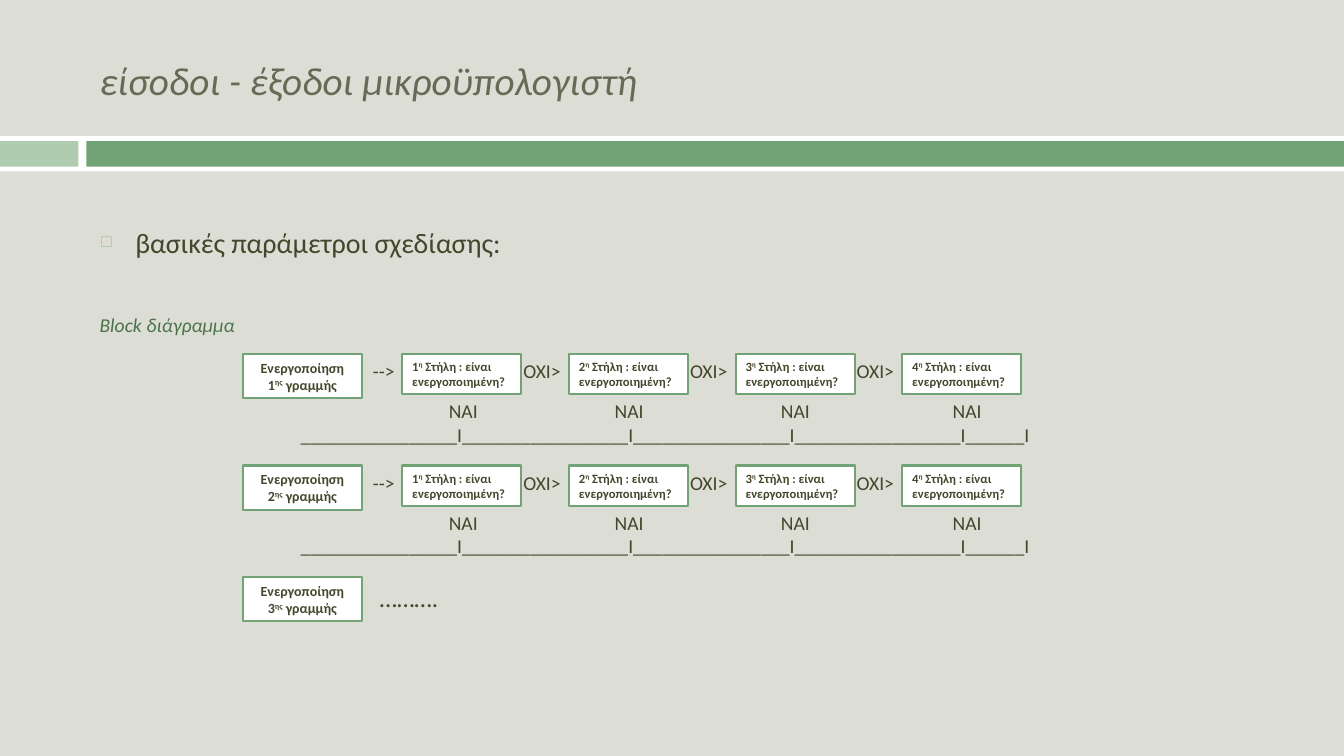
import pptx
import pptx.dml.color
import pptx.enum.shapes
import pptx.enum.text
import pptx.oxml
import pptx.oxml.ns
import pptx.util

Cm, Pt = pptx.util.Cm, pptx.util.Pt
RGBColor = pptx.dml.color.RGBColor
ANCHOR = pptx.enum.text.MSO_ANCHOR
ALIGN = pptx.enum.text.PP_ALIGN

BACKGROUND = RGBColor(0xDC, 0xDD, 0xD5)
WHITE = RGBColor(0xFF, 0xFF, 0xFF)
PALE_GREEN = RGBColor(0xB0, 0xCC, 0xB0)
GREEN = RGBColor(0x72, 0xA3, 0x76)
DARK_GREEN = RGBColor(0x4B, 0x73, 0x4B)
TITLE_GREY = RGBColor(0x67, 0x6A, 0x55)
INK = RGBColor(0x44, 0x47, 0x2B)

SLIDE_WIDTH, SLIDE_HEIGHT = 33.87, 19.05
STEP_WIDTH = 3.0
COLUMN_LEFT, COLUMN_PITCH = 4.02, 4.2
COLUMNS = 4
ROW_PITCH = 2.81
RETURN_LINE = "________________Ι_________________Ι________________Ι_________________Ι______Ι"


def format_runs(paragraph, size, color=INK, bold=False, italic=False):
    for run in paragraph.runs:
        run.font.name = "Calibri"
        run.font.size = Pt(size)
        run.font.color.rgb = color
        run.font.bold = bold
        run.font.italic = italic


def add_rect(slide, left, top, width, height, fill, line=None):
    rect = slide.shapes.add_shape(pptx.enum.shapes.MSO_SHAPE.RECTANGLE,
                                  Cm(left), Cm(top), Cm(width), Cm(height))
    rect.shadow.inherit = False
    rect.fill.solid()
    rect.fill.fore_color.rgb = fill
    if line is None:
        rect.line.fill.background()
    else:
        rect.line.color.rgb = line
        rect.line.width = Pt(1.5)
    return rect


def add_label(slide, left, top, width, height, text, size, wrap=True, **style):
    frame = slide.shapes.add_textbox(Cm(left), Cm(top), Cm(width), Cm(height)).text_frame
    frame.word_wrap = wrap
    frame.text = text
    for paragraph in frame.paragraphs:
        format_runs(paragraph, size, **style)
    return frame


def add_ppr_child(paragraph, xml):
    paragraph._p.get_or_add_pPr().append(
        pptx.oxml.parse_xml(xml.replace("/>", f" {pptx.oxml.ns.nsdecls('a')}/>", 1)
                            if xml.endswith("/>") and xml.count("<") == 1
                            else xml.replace(">", f" {pptx.oxml.ns.nsdecls('a')}>", 1)))


def add_step(slide, left, top, height, number, ending, rest, size, align):
    """Box whose text opens with an ordinal that has a raised ending."""
    frame = add_rect(slide, left, top, STEP_WIDTH, height, WHITE, GREEN).text_frame
    frame.word_wrap = True
    frame.vertical_anchor = ANCHOR.MIDDLE
    first_line, *other_lines = rest.split("\n")
    paragraph = frame.paragraphs[0]
    for part in (number, ending, first_line):
        paragraph.add_run().text = part
    for line in other_lines:
        frame.add_paragraph().text = line
    for paragraph in frame.paragraphs:
        paragraph.alignment = align
        format_runs(paragraph, size, bold=True)
    frame.paragraphs[0].runs[1].font._element.set("baseline", "30000")


def add_header(slide, left, top, width):
    title = add_label(slide, left + 2.26, top + 0.64, width - 3.67, 2.74,
                      "είσοδοι - έξοδοι μικροϋπολογιστή", 28,
                      color=TITLE_GREY, italic=True)
    title.vertical_anchor = ANCHOR.MIDDLE
    # Divider band
    add_rect(slide, left, top + 3.43, width, 0.89, WHITE)
    add_rect(slide, left, top + 3.56, 1.98, 0.64, PALE_GREEN)
    add_rect(slide, left + 2.18, top + 3.56, width - 2.18, 0.64, GREEN)


def add_intro(slide, left, top, width, height):
    frame = add_label(slide, left, top, width, height,
                      "βασικές παράμετροι σχεδίασης:\nBlock διάγραμμα", 20)
    parameters, caption = frame.paragraphs
    properties = parameters._p.get_or_add_pPr()
    properties.set("marL", str(Cm(0.9)))
    properties.set("indent", str(-Cm(0.9)))
    add_ppr_child(parameters, f'<a:buClr><a:srgbClr val="{PALE_GREEN}"/></a:buClr>')
    add_ppr_child(parameters, '<a:buSzPct val="60000"/>')
    add_ppr_child(parameters, '<a:buChar char="◻"/>')
    caption.space_before = Pt(38)
    format_runs(caption, 14, color=DARK_GREEN, italic=True)


def add_row_step(slide, left, top, number):
    add_step(slide, left, top, 1.12, f"Ενεργοποίηση {number}", "ης", " γραμμής",
             10, ALIGN.CENTER)


def add_scan_row(slide, left, top, number):
    add_row_step(slide, left, top, number)
    add_label(slide, left + STEP_WIDTH + 0.03, top, 1.07, 0.86, "-->", 14, wrap=False)
    # Column checks, joined by "no" links
    for column in range(COLUMNS):
        column_left = left + COLUMN_LEFT + column * COLUMN_PITCH
        add_step(slide, column_left, top, 1.02, str(column + 1), "η",
                 " Στήλη : είναι\nενεργοποιημένη?", 9, ALIGN.LEFT)
        if column < COLUMNS - 1:
            add_label(slide, column_left + STEP_WIDTH - 0.2, top, 1.45, 0.86,
                      "ΟΧΙ>", 14, wrap=False)
    # "Yes" exits above the return line
    frame = add_label(slide, left + 0.61, top + 1.01, 19.61, 1.46,
                      "\tΝΑΙ" * COLUMNS + "\n" + RETURN_LINE, 14)
    exits, return_line = frame.paragraphs
    stops = "".join(f'<a:tab pos="{Cm(position)}" algn="l"/>'
                    for position in (4.33, 8.51, 12.7, 17.03))
    add_ppr_child(exits, f"<a:tabLst>{stops}</a:tabLst>")
    return_line._p.get_or_add_pPr().set("marL", str(Cm(0.6)))


def add_block_diagram(slide, left, top):
    for row in range(2):
        add_scan_row(slide, left, top + row * ROW_PITCH, row + 1)
    last_top = top + 2 * ROW_PITCH
    add_row_step(slide, left, last_top, 3)
    add_label(slide, left + 3.2, last_top, 2.01, 1.02, "……….", 18, wrap=False)


def main():
    deck = pptx.Presentation()
    deck.slide_width, deck.slide_height = Cm(SLIDE_WIDTH), Cm(SLIDE_HEIGHT)
    slide = deck.slides.add_slide(deck.slide_layouts[6])
    slide.background.fill.solid()
    slide.background.fill.fore_color.rgb = BACKGROUND
    add_header(slide, 0, 0, SLIDE_WIDTH)
    add_intro(slide, 2.26, 5.56, 30.2, 3.1)
    add_block_diagram(slide, 6.12, 8.92)
    deck.save("out.pptx")


if __name__ == "__main__":
    main()
